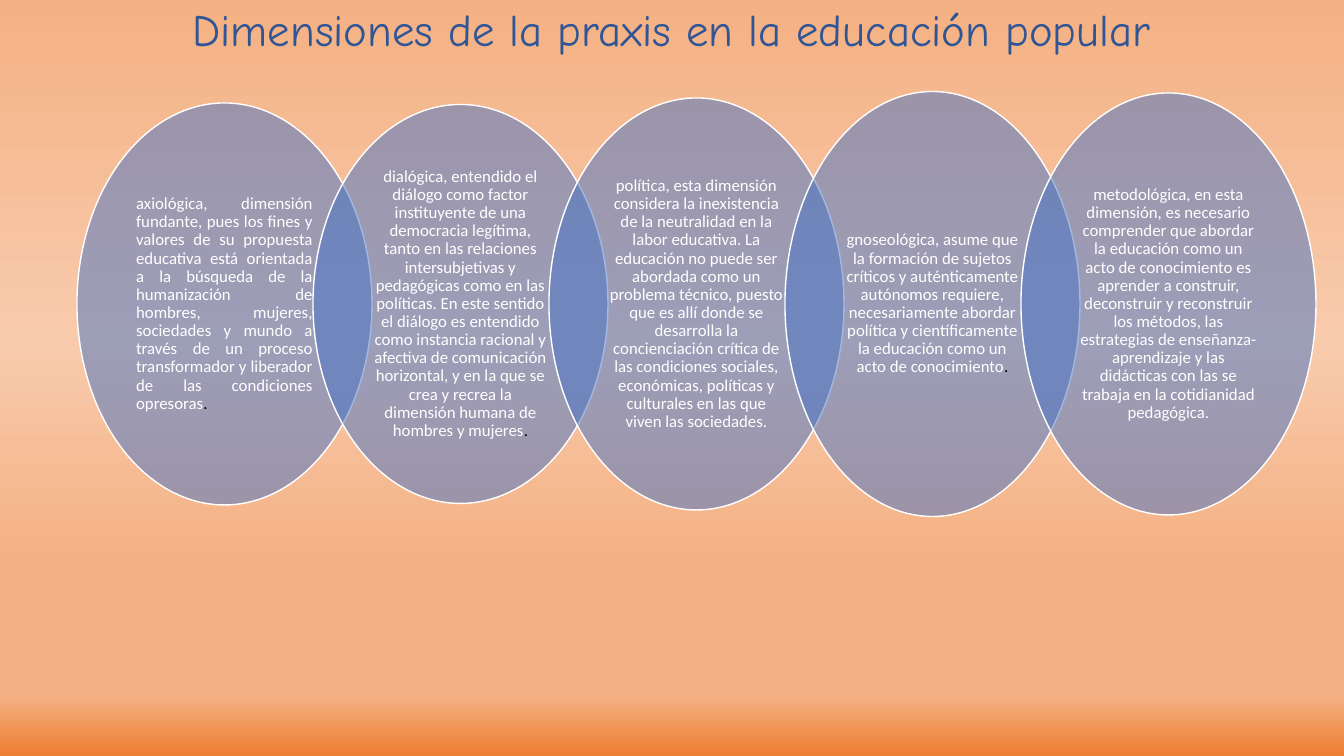
from dataclasses import dataclass

import pptx
import pptx.dml.color
import pptx.enum.shapes
import pptx.enum.text
import pptx.oxml
import pptx.oxml.ns
import pptx.util

Align = pptx.enum.text.PP_ALIGN
DRAWING_NS = pptx.oxml.ns.nsdecls("a")


@dataclass(frozen=True)
class Theme:
    title_font: str = "Comic Neue"
    body_font: str = "Calibri"
    title_size: int = 32
    body_size: int = 12
    title_color: str = "2F5597"
    oval_color: str = "4472C4"
    oval_opacity: int = 50
    light: str = "FFFFFF"
    dark: str = "000000"
    background: tuple[tuple[int, str], ...] = (
        (0, "F4B183"), (45, "F8CBAD"), (74, "F4B183"),
        (83, "F4B183"), (92, "F4B183"), (100, "ED7D31"),
    )


@dataclass(frozen=True)
class Dimension:
    height: int
    text: str
    dark_ending: str = ""
    alignment: Align = Align.CENTER


THEME = Theme()
SLIDE_WIDTH, SLIDE_HEIGHT = 1344, 756
OVAL_LEFT, OVAL_WIDTH, OVAL_PITCH, OVAL_CENTER = 77, 295, 236, 304

TITLE = "Dimensiones de la praxis en la educación popular"
DIMENSIONS = (
    Dimension(
        402,
        "axiológica, dimensión fundante, pues los fines y valores de su propuesta "
        "educativa está orientada a la búsqueda de la humanización de hombres, "
        "mujeres, sociedades y mundo a través de un proceso transformador y "
        "liberador de las condiciones opresoras",
        ".", Align.JUSTIFY,
    ),
    Dimension(
        399,
        "dialógica, entendido el diálogo como factor instituyente de una democracia "
        "legítima, tanto en las relaciones intersubjetivas y pedagógicas como en las "
        "políticas. En este sentido el diálogo es entendido como instancia racional y "
        "afectiva de comunicación horizontal, y en la que se crea y recrea la "
        "dimensión humana de hombres y mujeres",
        ".",
    ),
    Dimension(
        412,
        "política, esta dimensión considera la inexistencia de la neutralidad en la "
        "labor educativa. La educación no puede ser abordada como un problema "
        "técnico, puesto que es allí donde se desarrolla la concienciación crítica de "
        "las condiciones sociales, económicas, políticas y culturales en las que "
        "viven las sociedades.",
    ),
    Dimension(
        425,
        "gnoseológica, asume que la formación de sujetos críticos y auténticamente "
        "autónomos requiere, necesariamente abordar política y científicamente la "
        "educación como un acto de conocimiento",
        ".",
    ),
    Dimension(
        422,
        "metodológica, en esta dimensión, es necesario comprender que abordar la "
        "educación como un acto de conocimiento es aprender a construir, deconstruir "
        "y reconstruir los métodos, las estrategias de enseñanza-aprendizaje y las "
        "didácticas con las se trabaja en la cotidianidad pedagógica.",
    ),
)


def px(length: float) -> pptx.util.Emu:
    return pptx.util.Emu(round(length * 914400 / 100.8))


def rgb(color: str) -> pptx.dml.color.RGBColor:
    return pptx.dml.color.RGBColor.from_string(color)


def set_format(target: object, values: dict[str, object]) -> None:
    for name, value in values.items():
        setattr(target, name, value)


def paint_background(slide: pptx.slide.Slide) -> None:
    fill = slide.background.fill
    fill.gradient()
    fill.gradient_angle = 270
    stop_list = slide.background._cSld.find(".//" + pptx.oxml.ns.qn("a:gsLst"))
    for stop in list(stop_list):
        stop_list.remove(stop)
    for position, color in THEME.background:
        stop_list.append(pptx.oxml.parse_xml(
            f'<a:gs {DRAWING_NS} pos="{position * 1000}"><a:srgbClr val="{color}"/></a:gs>'
        ))


def start_text(shape: pptx.shapes.autoshape.Shape, side: int, edge: int,
               alignment: Align) -> pptx.text.text._Paragraph:
    """Set up the text frame and return its first paragraph."""
    set_format(shape.text_frame, {
        "word_wrap": True,
        "vertical_anchor": pptx.enum.text.MSO_ANCHOR.MIDDLE,
        "margin_left": px(side), "margin_right": px(side),
        "margin_top": px(edge), "margin_bottom": px(edge),
    })
    paragraph = shape.text_frame.paragraphs[0]
    set_format(paragraph, {"alignment": alignment, "line_spacing": 0.9})
    return paragraph


def add_run(paragraph: pptx.text.text._Paragraph, text: str, font: str,
            size: int, color: str) -> pptx.text.text._Run:
    run = paragraph.add_run()
    run.text = text
    set_format(run.font, {"name": font, "size": pptx.util.Pt(size)})
    run.font.color.rgb = rgb(color)
    return run


def add_title(slide: pptx.slide.Slide) -> None:
    box = slide.shapes.add_textbox(px(28), px(0), px(1288), px(64))
    paragraph = start_text(box, 10, 5, Align.CENTER)
    run = add_run(paragraph, TITLE, THEME.title_font, THEME.title_size, THEME.title_color)
    outline = pptx.oxml.parse_xml(
        f'<a:ln {DRAWING_NS} w="9525"><a:solidFill>'
        f'<a:srgbClr val="{THEME.light}"/></a:solidFill></a:ln>'
    )
    run.font._element.insert(0, outline)


def add_dimension(slide: pptx.slide.Slide, index: int, dimension: Dimension) -> None:
    oval = slide.shapes.add_shape(
        pptx.enum.shapes.MSO_SHAPE.OVAL,
        px(OVAL_LEFT + index * OVAL_PITCH), px(OVAL_CENTER - dimension.height / 2),
        px(OVAL_WIDTH), px(dimension.height),
    )
    oval.shadow.inherit = False
    oval.fill.solid()
    oval.fill.fore_color.rgb = rgb(THEME.oval_color)
    color = oval._element.spPr.find(".//" + pptx.oxml.ns.qn("a:srgbClr"))
    color.append(pptx.oxml.parse_xml(
        f'<a:alpha {DRAWING_NS} val="{THEME.oval_opacity * 1000}"/>'
    ))
    oval.line.color.rgb = rgb(THEME.light)
    oval.line.width = pptx.util.Pt(1)

    paragraph = start_text(oval, 16, 2, dimension.alignment)
    add_run(paragraph, dimension.text, THEME.body_font, THEME.body_size, THEME.light)
    if dimension.dark_ending:
        add_run(paragraph, dimension.dark_ending, THEME.body_font, THEME.body_size, THEME.dark)


def main() -> None:
    presentation = pptx.Presentation()
    set_format(presentation, {"slide_width": px(SLIDE_WIDTH), "slide_height": px(SLIDE_HEIGHT)})
    slide = presentation.slides.add_slide(presentation.slide_layouts[6])
    paint_background(slide)
    add_title(slide)
    for index, dimension in enumerate(DIMENSIONS):
        add_dimension(slide, index, dimension)
    presentation.save("out.pptx")


if __name__ == "__main__":
    main()
